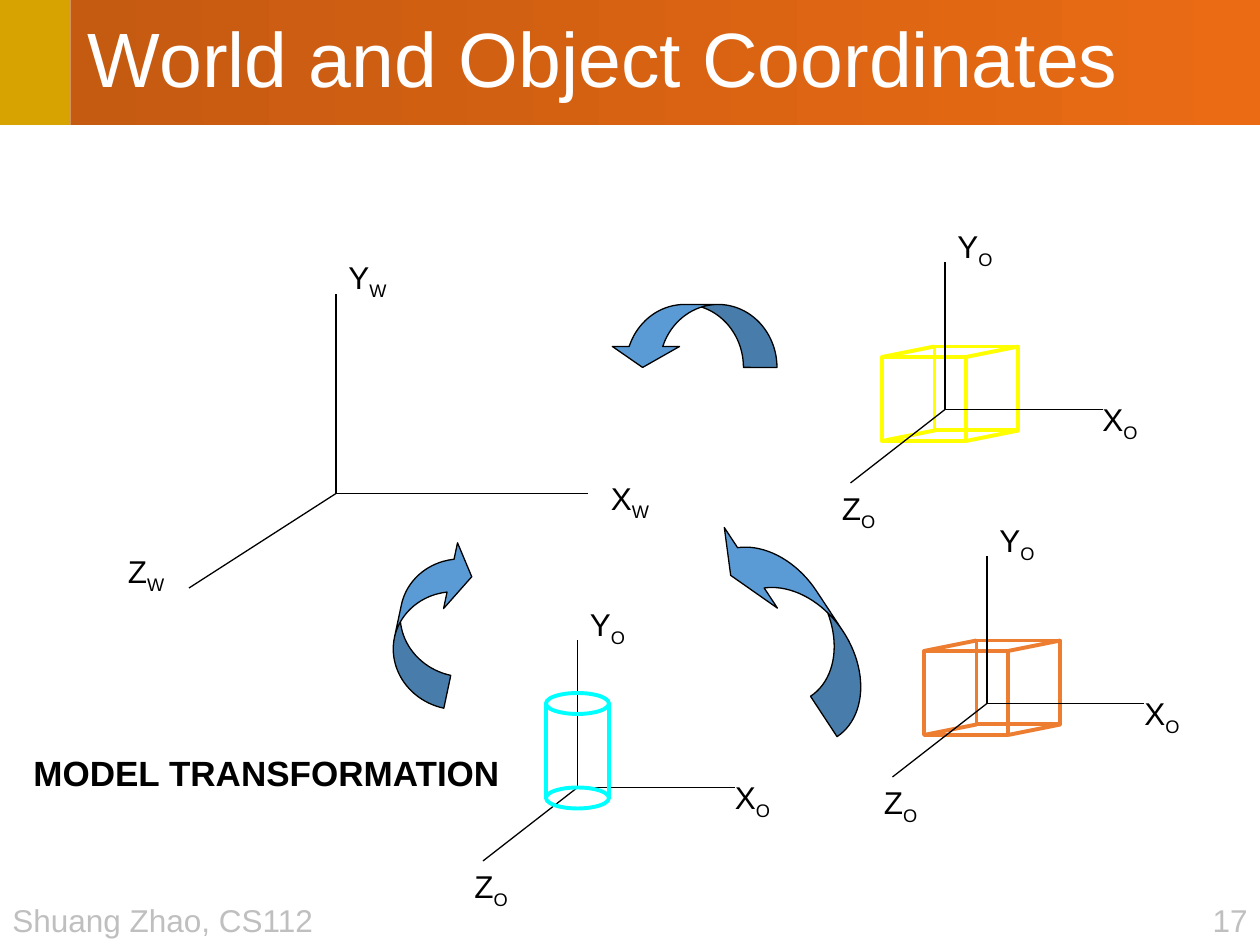
"""Build a slide on world and object coordinates, laid out on a grid of twelfths of an inch."""
from lxml.etree import SubElement
from pptx import Presentation
from pptx.dml.color import RGBColor
from pptx.enum.shapes import MSO_CONNECTOR, MSO_SHAPE
from pptx.enum.text import MSO_ANCHOR, MSO_AUTO_SIZE, PP_ALIGN
from pptx.oxml.ns import qn
from pptx.util import Inches, Pt

RECTANGLE, OVAL = MSO_SHAPE.RECTANGLE, MSO_SHAPE.OVAL
CURVED_ARROW, STRAIGHT = MSO_SHAPE.CURVED_DOWN_ARROW, MSO_CONNECTOR.STRAIGHT
LEFT, RIGHT, MIDDLE, TOP = PP_ALIGN.LEFT, PP_ALIGN.RIGHT, MSO_ANCHOR.MIDDLE, MSO_ANCHOR.TOP
NO_RESIZE = MSO_AUTO_SIZE.NONE

COLUMNS, ROWS = 120, 90
COLORS = {
    "black": "000000", "white": "FFFFFF", "gray": "BFBFBF", "gold": "D6A300",
    "rust": "C55A11", "bright": "EA6B14", "orange": "ED7D31",
    "yellow": "FFFF00", "cyan": "00FFFF", "blue": "5B9BD5",
}

TITLE = "World and Object Coordinates"
BAND_HEIGHT, BAND_LEFT = 11.9, 6.7
CAPTIONS = [
    ("Shuang Zhao, CS112", (0, 85.2, 31.3, 4.8), {"color": "gray"}),
    ("17", (113.9, 85.2, 6.1, 4.8), {"color": "gray", "align": RIGHT}),
    ("MODEL TRANSFORMATION", (2, 71, 47, 5.2), {"size": 20, "bold": True}),
]

WORLD_AXES = {
    "subscript": "W", "label_width": 6.3,
    "ends": [(0, -19), (-14, 9), (24, 0)],
    "labels": [("X", 25, -2), ("Y", 0, -23), ("Z", -21, 5)],
}
OBJECT_AXES = {
    "subscript": "O", "label_width": 6,
    "ends": [(0, -14), (15, 0), (-9, 7)],
    "labels": [("X", 13.8, -1.5), ("Y", 0, -18), ("Z", -11, 7)],
}
FRAMES = [
    ((94, 67), OBJECT_AXES, "orange"),
    ((32, 47), WORLD_AXES, None),
    ((90, 39), OBJECT_AXES, "yellow"),
    ((55, 75), OBJECT_AXES, None),
]
CYLINDER_ORIGIN = (55, 75)
CUBE_SIDE, CUBE_FRONT, CUBE_BACK = 8, (-6, -5), (-1, -6)
ARROWS = [
    ((58, 29, 16, 6), 0, {"flipH": "1"}, (0.533, 1.067, 0.333)),
    ((64.4, 55.9, 23, 6), 56.6, {"flipH": "1"}, (0.767, 1.533, 0.333)),
    ((33, 56, 16, 6), 102, {"flipH": "1", "flipV": "1"}, (0.533, 1.067, 0.333)),
]

deck = Presentation()
deck.slide_width, deck.slide_height = Inches(10), Inches(7.5)
page = deck.slides.add_slide(deck.slide_layouts[6])


def grid(*cells):
    return [round(cell * deck.slide_width / COLUMNS) for cell in cells]


def color(name):
    return RGBColor.from_string(COLORS[name])


def write(frame, text, subscript="", size=18, color_name="black", bold=False,
          align=LEFT, anchor=TOP, wrap=False, spacing=1.0):
    frame.word_wrap, frame.auto_size, frame.vertical_anchor = wrap, NO_RESIZE, anchor
    para = frame.paragraphs[0]
    para.alignment, para.line_spacing = align, spacing
    for part, baseline in ((text, None), (subscript, "-25000")):
        if part:
            span = para.add_run()
            span.text = part
            span.font.name, span.font.size, span.font.bold = "Arial", Pt(size), bold
            span.font.color.rgb = color(color_name)
            if baseline:
                span.font._element.set("baseline", baseline)


def add_label(text, place, color="black", **style):
    box = page.shapes.add_textbox(*grid(*place))
    write(box.text_frame, text, color_name=color, **style)


def add_outline(kind, place, fill=None, line=None, width=2.25):
    shape = page.shapes.add_shape(kind, *grid(*place))
    shape.shadow.inherit = False
    if fill:
        shape.fill.solid()
        shape.fill.fore_color.rgb = color(fill)
    else:
        shape.fill.background()
    if line:
        shape.line.color.rgb, shape.line.width = color(line), Pt(width)
    else:
        shape.line.fill.background()
    return shape


def add_line(start, end, line="black", width=0.75):
    connector = page.shapes.add_connector(STRAIGHT, *grid(*start, *end))
    connector.line.color.rgb, connector.line.width = color(line), Pt(width)
    SubElement(connector._element.spPr, qn("a:effectLst"))


def shift(point, offset):
    return point[0] + offset[0], point[1] + offset[1]


def add_cube(origin, line):
    front, back = shift(origin, CUBE_FRONT), shift(origin, CUBE_BACK)
    for corner in (front, back):
        add_outline(RECTANGLE, (*corner, CUBE_SIDE, CUBE_SIDE), line=line)
    for across in (0, CUBE_SIDE):
        for down in (0, CUBE_SIDE):
            add_line(shift(front, (across, down)), shift(back, (across, down)), line, 2.25)


def add_axes(origin, axes):
    for end in axes["ends"]:
        add_line(origin, shift(origin, end))
    for letter, *offset in axes["labels"]:
        place = (*shift(origin, offset), axes["label_width"], 4.8)
        add_label(letter, place, subscript=axes["subscript"])


def add_cylinder(origin, radius=3, height=9, depth=2):
    left, base = origin[0] - radius, origin[1]
    for top in (base - height, base):
        add_outline(OVAL, (left, top, 2 * radius, depth), line="cyan")
    middle = base + depth / 2
    for side in (left, left + 2 * radius):
        add_line((side, middle - height), (side, middle), "cyan", 2.25)


def add_arrow(place, rotation, flips, adjustments):
    arrow = add_outline(CURVED_ARROW, place, fill="blue", line="black", width=0.75)
    arrow.rotation = rotation
    for index, value in enumerate(adjustments):
        arrow.adjustments[index] = value
    for name, value in flips.items():
        arrow._element.spPr.find(qn("a:xfrm")).set(name, value)


def add_title():
    add_outline(RECTANGLE, (0, 0, BAND_LEFT, BAND_HEIGHT), fill="gold")
    band = add_outline(RECTANGLE, (BAND_LEFT, 0, COLUMNS - BAND_LEFT, BAND_HEIGHT))
    band.fill.gradient()
    band.fill.gradient_angle = 0
    for stop, name in zip(band.fill.gradient_stops, ("rust", "bright")):
        stop.color.rgb = color(name)
    band.text_frame.margin_left = Inches(0.14)
    write(band.text_frame, TITLE, size=44, color_name="white", anchor=MIDDLE,
          wrap=True, spacing=0.9)


add_title()
for origin, axes, cube in FRAMES:
    if cube:
        add_cube(origin, cube)
    add_axes(origin, axes)
add_cylinder(CYLINDER_ORIGIN)
for arrow in ARROWS:
    add_arrow(*arrow)
for text, place, style in CAPTIONS:
    add_label(text, place, **style)
deck.save("out.pptx")
